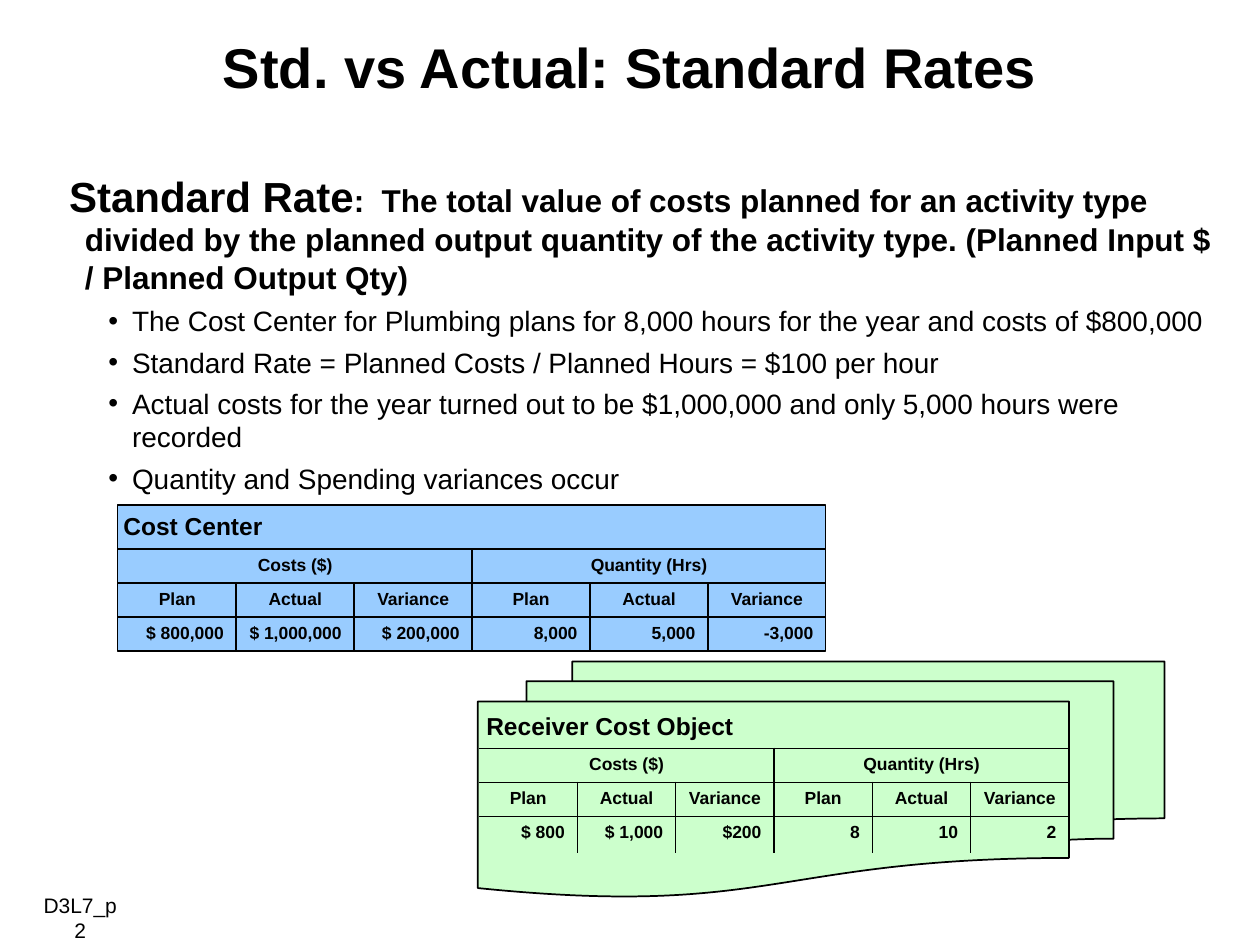
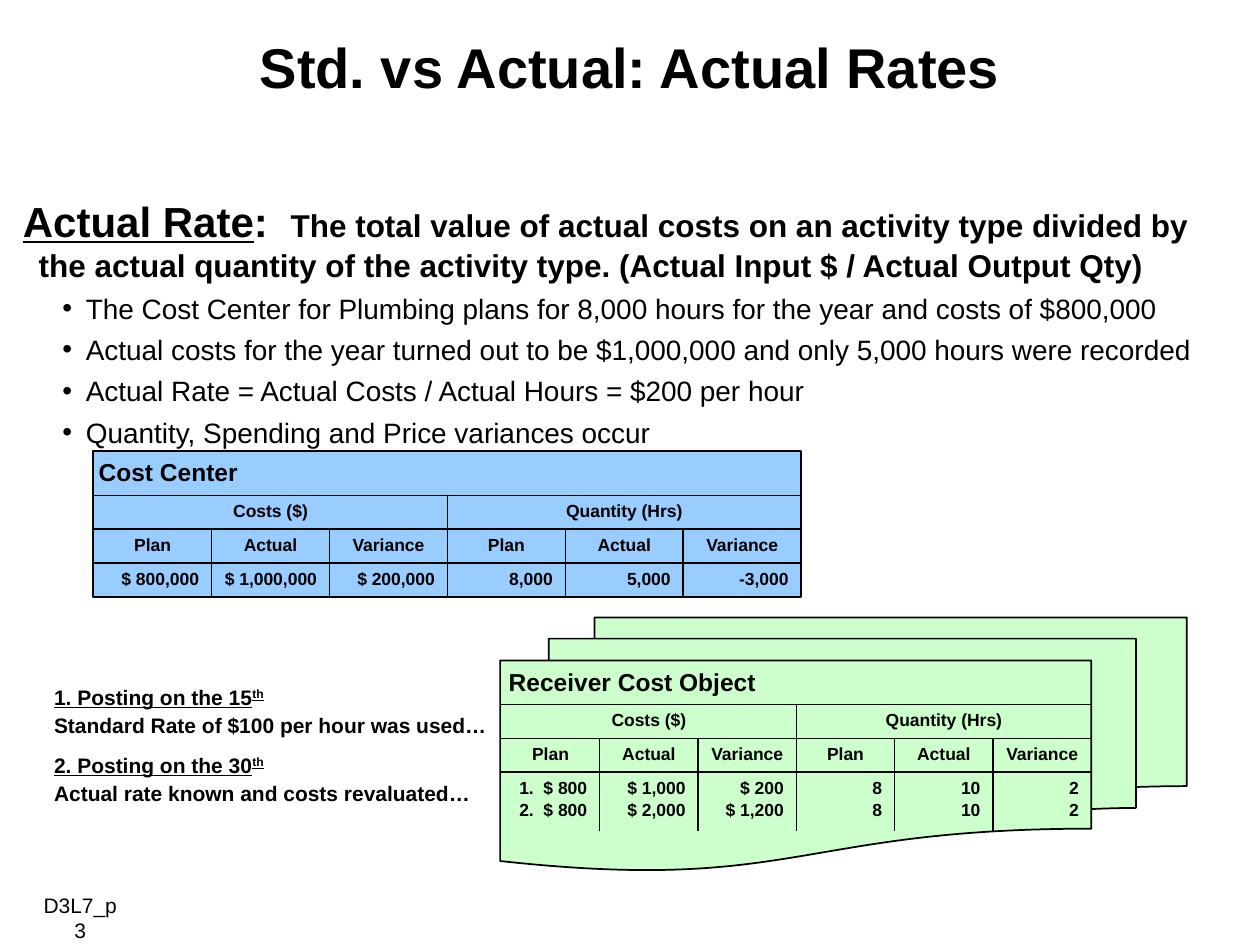
from dataclasses import dataclass

from lxml.etree import SubElement
from pptx import Presentation
from pptx.dml.color import RGBColor
from pptx.enum.shapes import MSO_SHAPE
from pptx.enum.text import PP_ALIGN
from pptx.oxml.ns import qn
from pptx.util import Pt


@dataclass(frozen=True)
class Theme:
    font: str = "Arial"
    ink: RGBColor = RGBColor(0, 0, 0)
    blue: RGBColor = RGBColor(0x99, 0xCC, 0xFF)
    green: RGBColor = RGBColor(0xCC, 0xFF, 0xCC)
    title: int = 32
    term: int = 24
    lead: int = 18
    point: int = 16
    head: int = 14
    small: int = 12
    cell: int = 10
    line: int = 1


T = Theme()
HEADS = ["Plan", "Actual", "Variance"] * 2


@dataclass(frozen=True)
class Card:
    """A labelled panel with a cost table on it."""
    name: str
    kind: MSO_SHAPE
    fill: RGBColor
    width: float
    col: float
    head: tuple    # offset of the heading
    grid: tuple    # offset of the table


COST = Card("Cost Center", MSO_SHAPE.RECTANGLE, T.blue, 404.6, 67.4,
            (-3.8, 0), (0.4, 25.2))
RECEIVER = Card("Receiver Cost Object", MSO_SHAPE.FLOWCHART_MULTIDOCUMENT,
                T.green, 392.4, 56.2, (-2.2, 24.8), (0.7, 49.7))


# Text
def style(item, size, bold=False):
    font = item.font
    font.name, font.size, font.bold = T.font, Pt(size), bold
    font.color.rgb = T.ink


def frame(slide, x, y, w, h, pad=3.6):
    box = slide.shapes.add_textbox(Pt(x), Pt(y), Pt(w), Pt(h))
    text = box.text_frame
    text.word_wrap = True
    text.margin_left = text.margin_right = Pt(7.2)
    text.margin_top = text.margin_bottom = Pt(pad)
    return text


def label(slide, box, text, size, bold=False, align=PP_ALIGN.LEFT, pad=3.6):
    par = frame(slide, *box, pad).paragraphs[0]
    par.text = text
    par.alignment = align
    style(par.runs[0], size, bold)


def add_runs(par, parts):
    """Add bold runs, each given as text, size and marks (u, sup)."""
    for text, size, marks in parts:
        run = par.add_run()
        run.text = text
        style(run, size, True)
        run.font.underline = "u" in marks
        if "sup" in marks:
            run.font._element.set("baseline", "30000")


def indent(par, left, hang):
    props = par._p.get_or_add_pPr()
    props.set("marL", str(Pt(left)))
    props.set("indent", str(Pt(-hang)))
    return props


def body(slide, box, lead, points):
    text = frame(slide, *box)
    first = text.paragraphs[0]
    indent(first, 9, 9)
    first.space_after = Pt(2)
    add_runs(first, lead)
    for point in points:
        par = text.add_paragraph()
        par.text = point
        par.level = 1
        par.space_before, par.space_after = Pt(2.4), Pt(2)
        props = indent(par, 36, 13.5)
        SubElement(props, qn("a:buFont")).set("typeface", T.font)
        SubElement(props, qn("a:buChar")).set("char", "•")
        style(par.runs[0], T.point)


def steps(slide, box, items):
    """Dated postings: an underlined heading and a line below it."""
    text = frame(slide, *box)
    for i, (head, note) in enumerate(items):
        top = text.add_paragraph() if i else text.paragraphs[0]
        if i:
            top.space_before = Pt(6)
        add_runs(top, [(head, T.small, "u"), ("th", T.small, ("u", "sup"))])
        low = text.add_paragraph()
        add_runs(low, [(note, T.small, "")])
        top.space_after = low.space_after = Pt(2)


# Tables
def border(cell, **edges):
    props = cell._tc.get_or_add_tcPr()
    for i, side in enumerate("LRTB"):
        line = SubElement(props, qn(f"a:ln{side}"), w=str(Pt(T.line)))
        if edges[side]:
            fill = SubElement(line, qn("a:solidFill"))
            SubElement(fill, qn("a:srgbClr")).set("val", str(T.ink))
        else:
            SubElement(line, qn("a:noFill"))


def grid(slide, x, y, col, values, last):
    rows = [["Costs ($)", "", "", "Quantity (Hrs)", "", ""], HEADS, values]
    tall = [19.4, 19.4, last]
    table = slide.shapes.add_table(
        3, 6, Pt(x), Pt(y), Pt(col * 6), Pt(sum(tall))).table
    table.first_row = table.horz_banding = False
    for column in table.columns:
        column.width = Pt(col)
    for r, row in enumerate(rows):
        table.rows[r].height = Pt(tall[r])
        for c, value in enumerate(row):
            cell = table.cell(r, c)
            cell.text_frame.text = value
            for i, par in enumerate(cell.text_frame.paragraphs):
                par.alignment = PP_ALIGN.RIGHT if r == 2 else PP_ALIGN.CENTER
                if i:
                    par.space_before = Pt(1.6)
                style(par, T.cell, True)
                for run in par.runs:
                    style(run, T.cell, True)
            # Only lines inside the grid and along its top are drawn
            border(cell, L=c == 3 or (r and c), T=True, B=r < 2,
                   R=c in (0, 2) if r == 0 else c < 5)
            cell.fill.background()
    for c in (0, 3):
        table.cell(0, c).merge(table.cell(0, c + 2))


def panel(slide, card, x, y, high, values, last=19.4):
    shape = slide.shapes.add_shape(
        card.kind, Pt(x), Pt(y), Pt(card.width), Pt(high))
    shape.shadow.inherit = False
    shape.fill.solid()
    shape.fill.fore_color.rgb = card.fill
    shape.line.color.rgb = T.ink
    shape.line.width = Pt(T.line)
    dx, dy = card.head
    label(slide, (x + dx, y + dy, 170, 24), card.name, T.head, True)
    dx, dy = card.grid
    grid(slide, x + dx, y + dy, card.col, values, last)


# Slides
def new_slide(deck, title, page):
    slide = deck.slides.add_slide(deck.slide_layouts[6])
    label(slide, (96, 18.4, 528, 38), title, T.title, True,
          PP_ALIGN.CENTER, 0)
    label(slide, (14.6, 510, 62.6, 14.4), f"D3L7_p{page}", T.small,
          align=PP_ALIGN.CENTER, pad=0)
    return slide


def main():
    deck = Presentation()
    deck.slide_width, deck.slide_height = Pt(720), Pt(540)
    plan = ("The Cost Center for Plumbing plans for 8,000 hours for the year "
            "and costs of $800,000")
    actual = ("Actual costs for the year turned out to be $1,000,000 and only "
              "5,000 hours were recorded")
    costs = ["$ 800,000", "$ 1,000,000", "$ 200,000",
             "8,000", "5,000", "-3,000"]

    # Standard rates
    slide = new_slide(deck, "Std. vs Actual: Standard Rates", 2)
    panel(slide, COST, 67.2, 288.6, 83.5, costs)
    panel(slide, RECEIVER, 273, 378, 134.6,
          ["$ 800", "$ 1,000", "$200", "8", "10", "2"], 20.9)
    body(slide, (32.4, 93.6, 669.6, 190.8), [
        ("Standard Rate", T.term, ""),
        (":  The total value of costs planned for an activity type divided by "
         "the planned output quantity of the activity type. (Planned Input $ "
         "/ Planned Output Qty)", T.lead, ""),
    ], [
        plan,
        "Standard Rate = Planned Costs / Planned Hours = $100 per hour",
        actual,
        "Quantity and Spending variances occur",
    ])

    # Actual rates
    slide = new_slide(deck, "Std. vs Actual: Actual Rates", 3)
    panel(slide, RECEIVER, 285.8, 352.8, 144.7,
          ["1.  $ 800\n2.  $ 800", "$ 1,000\n$ 2,000", "$ 200\n$ 1,200",
           "8\n8", "10\n10", "2\n2"], 33.4)
    body(slide, (6, 108, 705.6, 150.5), [
        ("Actual Rate", T.term, "u"),
        (":", T.term, ""),
        ("\tThe total value of actual costs on an activity type divided by "
         "the actual quantity of the activity type. (Actual Input $ / Actual "
         "Output Qty)", T.lead, ""),
    ], [
        plan,
        actual,
        "Actual Rate = Actual Costs / Actual Hours = $200 per hour",
        "Quantity, Spending and Price variances occur",
    ])
    steps(slide, (23.8, 387.4, 280.8, 77.8), [
        ("1. Posting on the 15", "Standard Rate of $100 per hour was used…"),
        ("2. Posting on the 30", "Actual rate known and costs revaluated…"),
    ])
    panel(slide, COST, 53.1, 257.8, 83.5, costs)

    deck.save("out.pptx")


if __name__ == "__main__":
    main()
